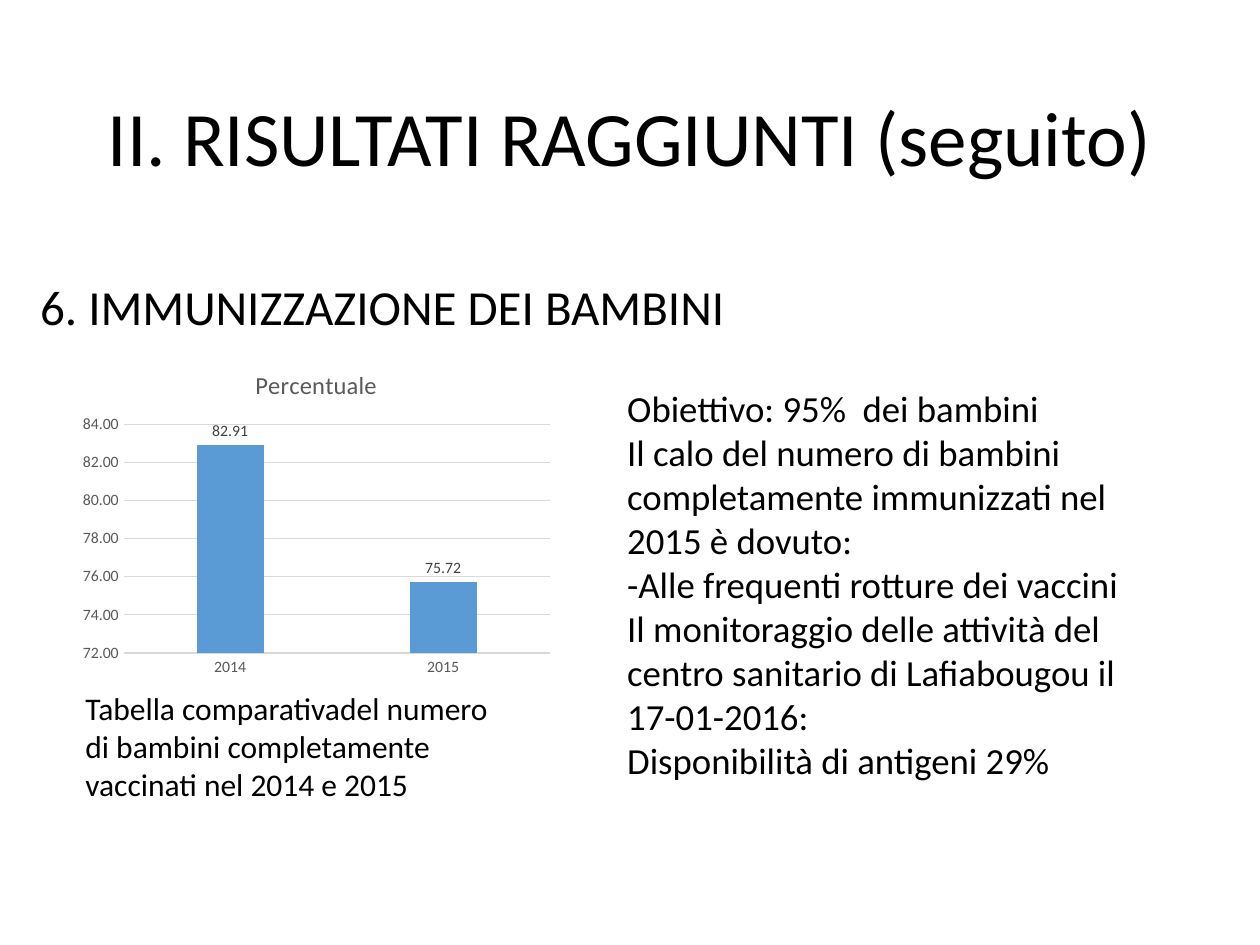
from pptx import Presentation
from pptx.chart.data import CategoryChartData
from pptx.dml.color import RGBColor
from pptx.enum.chart import XL_CHART_TYPE, XL_LABEL_POSITION, XL_TICK_MARK
from pptx.enum.text import MSO_ANCHOR, PP_ALIGN
from pptx.util import Inches, Pt

COLUMNS = XL_CHART_TYPE.COLUMN_CLUSTERED
OUTSIDE_END = XL_LABEL_POSITION.OUTSIDE_END
NO_TICK = XL_TICK_MARK.NONE
MIDDLE, TOP = MSO_ANCHOR.MIDDLE, MSO_ANCHOR.TOP
CENTER, LEFT = PP_ALIGN.CENTER, PP_ALIGN.LEFT

FONT = "Calibri"
COLORS = {
    "background": "FFFFFF",
    "text": "000000",
    "chart_text": "595959",
    "label": "404040",
    "grid": "D9D9D9",
    "bar": "5B9BD5",
}


def color(name):
    return RGBColor.from_string(COLORS[name])


class SlideBuilder:
    """Holds the style and the slide being filled."""

    def __init__(self, presentation):
        self.slide = presentation.slides.add_slide(presentation.slide_layouts[5])
        fill = self.slide.background.fill
        fill.solid()
        fill.fore_color.rgb = color("background")

    def style_font(self, font, size, color_name="text"):
        values = {"name": FONT, "size": Pt(size), "bold": False}
        for name, value in values.items():
            setattr(font, name, value)
        font.color.rgb = color(color_name)

    def fill_text(self, shape, lines, size, anchor=TOP, **paragraph_format):
        frame = shape.text_frame
        frame.word_wrap = True
        frame.vertical_anchor = anchor
        frame.text = "\n".join(lines)
        for paragraph in frame.paragraphs:
            for name, value in paragraph_format.items():
                setattr(paragraph, name, value)
            for run in paragraph.runs:
                self.style_font(run.font, size)

    def title(self, text, box, size):
        shape = self.slide.shapes.title
        for name, value in zip(("left", "top", "width", "height"), box):
            setattr(shape, name, Inches(value))
        self.fill_text(shape, [text], size, MIDDLE, alignment=CENTER, line_spacing=0.9)

    def text(self, lines, box, size, **paragraph_format):
        shape = self.slide.shapes.add_textbox(*map(Inches, box))
        self.fill_text(shape, lines, size, alignment=LEFT, **paragraph_format)

    def column_chart(self, title, categories, values, box):
        data = CategoryChartData()
        data.categories = categories
        data.add_series(title, values)
        chart = self.slide.shapes.add_chart(COLUMNS, *map(Inches, box), data).chart
        self.style_font(chart.font, 10)
        chart.has_legend = False
        chart.has_title = True
        title_frame = chart.chart_title.text_frame
        title_frame.text = title
        self.style_font(title_frame.paragraphs[0].runs[0].font, 14, "chart_text")
        self.style_axes(chart)
        self.style_columns(chart.plots[0])

    def style_axes(self, chart):
        category_axis, value_axis = chart.category_axis, chart.value_axis
        for axis in (category_axis, value_axis):
            axis.major_tick_mark = axis.minor_tick_mark = NO_TICK
            self.style_font(axis.tick_labels.font, 9, "chart_text")
        scale = {"minimum_scale": 72, "maximum_scale": 84, "major_unit": 2}
        for name, value in scale.items():
            setattr(value_axis, name, value)
        value_axis.tick_labels.number_format = "0.00"
        value_axis.tick_labels.number_format_is_linked = False
        value_axis.format.line.fill.background()
        for line in (category_axis.format.line, value_axis.major_gridlines.format.line):
            line.color.rgb = color("grid")
            line.width = Pt(0.75)

    def style_columns(self, plot):
        plot.gap_width, plot.overlap = 219, -27
        plot.vary_by_categories = False
        fill = plot.series[0].format.fill
        fill.solid()
        fill.fore_color.rgb = color("bar")
        labels = plot.series[0].data_labels
        label_format = {
            "show_value": True,
            "position": OUTSIDE_END,
            "number_format": "0.00",
            "number_format_is_linked": False,
        }
        for name, value in label_format.items():
            setattr(labels, name, value)
        self.style_font(labels.font, 9, "label")


def main():
    presentation = Presentation()
    presentation.slide_width, presentation.slide_height = Inches(10), Inches(7.5)
    builder = SlideBuilder(presentation)
    builder.title("II. RISULTATI RAGGIUNTI (seguito)", (0.69, 0.4, 8.62, 1.45), 44)
    builder.text(["6. IMMUNIZZAZIONE DEI BAMBINI"], (0.22, 2.2, 9.09, 4.36), 28,
                 line_spacing=0.9, space_before=Pt(10))
    builder.text(
        ["Tabella comparativadel numero di bambini completamente vaccinati nel 2014 e 2015"],
        (0.58, 5.42, 3.44, 1.01), 18)
    builder.column_chart("Percentuale", ["2014", "2015"], [82.91, 75.72],
                         (0.58, 2.78, 3.86, 2.64))
    builder.text([
        "Obiettivo: 95%  dei bambini",
        "Il calo del numero di bambini completamente immunizzati nel 2015 è dovuto:",
        "-Alle frequenti rotture dei vaccini",
        "Il monitoraggio delle attività del centro sanitario di Lafiabougou il 17-01-2016:",
        "Disponibilità di antigeni 29%",
    ], (4.88, 3.01, 4.27, 3.28), 21)
    presentation.save("out.pptx")


if __name__ == "__main__":
    main()
